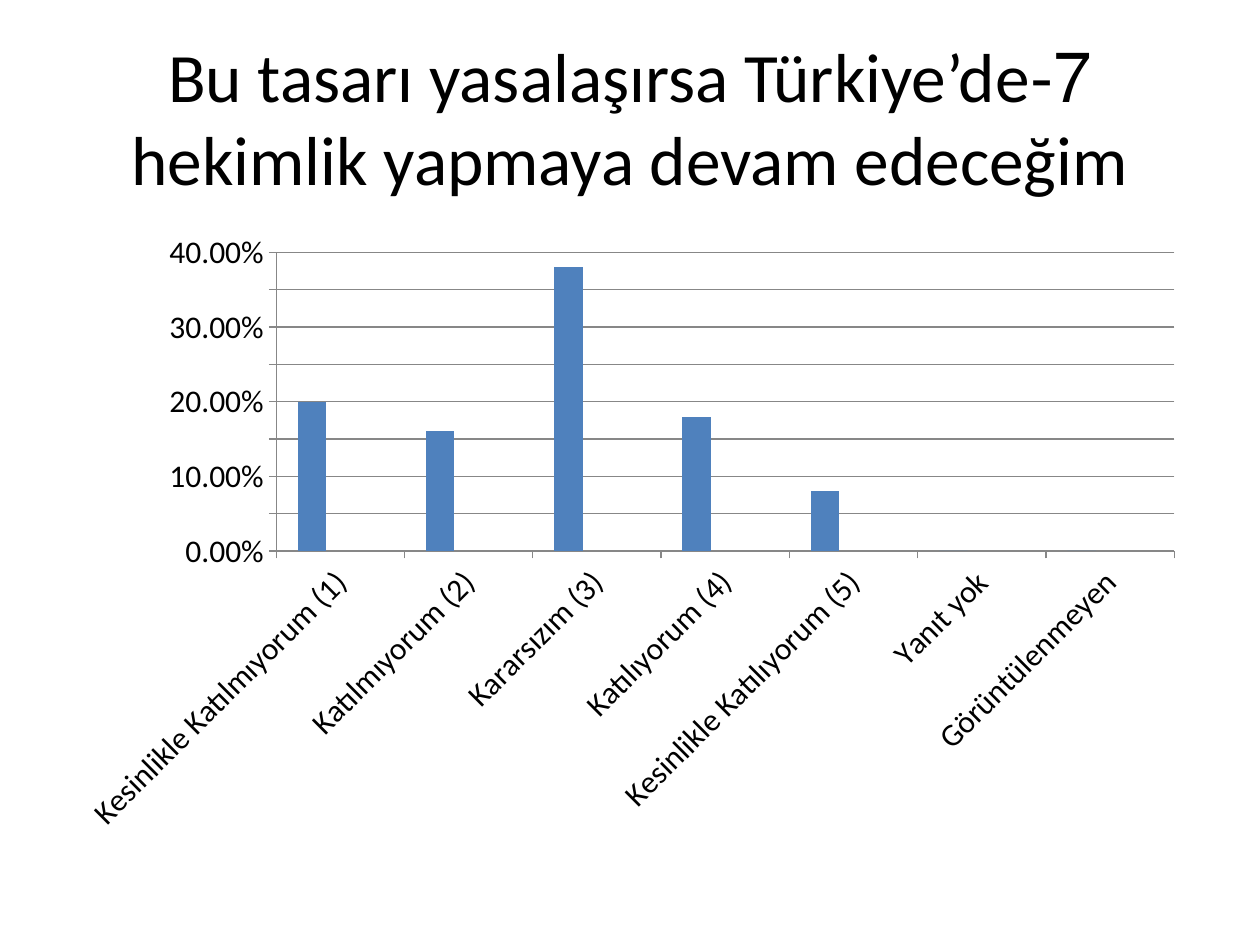
import dataclasses

import pptx
import pptx.chart.axis
import pptx.chart.data
import pptx.chart.series
import pptx.dml.color
import pptx.dml.fill
import pptx.enum.chart
import pptx.enum.text
import pptx.util

Cm = pptx.util.Cm
FONT = "Calibri"
BLACK = "000000"
GREY = "878787"


@dataclasses.dataclass(frozen=True)
class AnswerSeries:
    name: str
    shares: tuple[float | None, ...]
    color: str


ANSWERS = (
    "Kesinlikle Katılmıyorum (1)",
    "Katılmıyorum (2)",
    "Kararsızım (3)",
    "Katılıyorum (4)",
    "Kesinlikle Katılıyorum (5)",
    "Yanıt yok",
    "Görüntülenmeyen",
)
NO_SHARES = (None,) * len(ANSWERS)
SURVEY = (
    AnswerSeries("Series 1", (0.2, 0.16, 0.38, 0.18, 0.08, 0, 0), "4F81BD"),
    AnswerSeries("Series 2", NO_SHARES, "C0504D"),
    AnswerSeries("Series 3", NO_SHARES, "9BBB59"),
)


def apply_format(target: object, values: dict) -> None:
    for attribute, value in values.items():
        setattr(target, attribute, value)


def paint(fill: pptx.dml.fill.FillFormat, color: str) -> None:
    fill.solid()
    fill.fore_color.rgb = pptx.dml.color.RGBColor.from_string(color)


def format_font(font: object, size: float) -> None:
    apply_format(font, {"name": FONT, "size": pptx.util.Pt(size)})
    paint(font.fill, BLACK)


def format_axis(axis: pptx.chart.axis._BaseAxis, values: dict) -> None:
    apply_format(axis, values)
    paint(axis.format.line.fill, GREY)


def paint_series(series: pptx.chart.series.BarSeries, answer: AnswerSeries) -> None:
    series.invert_if_negative = False
    paint(series.format.fill, answer.color)


def add_question(slide: object) -> None:
    question = slide.shapes.title
    apply_format(question, {
        "left": Cm(1.27), "top": Cm(0.76), "width": Cm(22.86), "height": Cm(3.18),
    })
    apply_format(question.text_frame, {
        "text": "7-Bu tasarı yasalaşırsa Türkiye’de hekimlik yapmaya devam edeceğim",
        "word_wrap": True,
        "auto_size": pptx.enum.text.MSO_AUTO_SIZE.NONE,
        "vertical_anchor": pptx.enum.text.MSO_ANCHOR.MIDDLE,
    })
    paragraph = question.text_frame.paragraphs[0]
    paragraph.alignment = pptx.enum.text.PP_ALIGN.CENTER
    paragraph._p.get_or_add_pPr().set("rtl", "1")
    format_font(paragraph.runs[0].font, 39.6)


def add_survey_chart(slide: object) -> None:
    survey_data = pptx.chart.data.CategoryChartData(number_format="0.00%")
    survey_data.categories = ANSWERS
    for answer in SURVEY:
        survey_data.add_series(answer.name, answer.shares)
    chart = slide.shapes.add_chart(
        pptx.enum.chart.XL_CHART_TYPE.COLUMN_CLUSTERED,
        Cm(1.27), Cm(4.45), Cm(22.86), Cm(12.57), survey_data,
    ).chart
    apply_format(chart, {"has_legend": False, "has_title": False})
    format_font(chart.font, 18)
    apply_format(chart.plots[0], {"gap_width": 150, "overlap": 0, "vary_by_categories": False})
    for series, answer in zip(chart.plots[0].series, SURVEY):
        paint_series(series, answer)

    outside = pptx.enum.chart.XL_TICK_MARK.OUTSIDE
    format_axis(chart.category_axis, {"major_tick_mark": outside})
    format_axis(chart.value_axis, {
        "major_tick_mark": outside,
        "has_major_gridlines": True,
        "minimum_scale": 0,
        "maximum_scale": 0.4,
        "major_unit": 0.05,
    })
    apply_format(chart.value_axis.tick_labels, {
        "number_format": "0.00%", "number_format_is_linked": False,
    })
    paint(chart.value_axis.major_gridlines.format.line.fill, GREY)


def main() -> None:
    deck = pptx.Presentation()
    apply_format(deck, {"slide_width": Cm(25.4), "slide_height": Cm(19.05)})
    slide = deck.slides.add_slide(deck.slide_layouts[5])
    add_question(slide)
    add_survey_chart(slide)
    deck.save("out.pptx")


if __name__ == "__main__":
    main()
